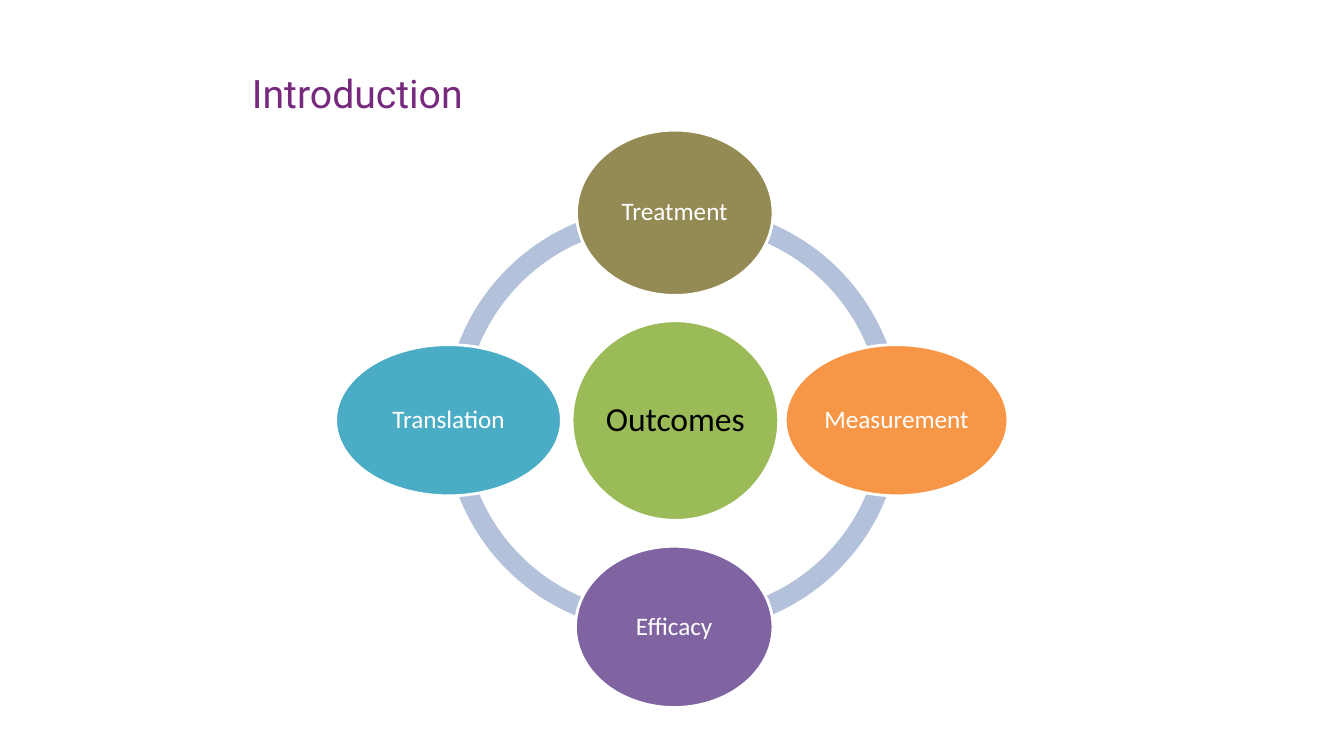
"""Build the Introduction slide: a ring of four topics around Outcomes."""
from pptx import Presentation
from pptx.dml.color import RGBColor
from pptx.enum.shapes import MSO_SHAPE
from pptx.enum.text import MSO_ANCHOR, PP_ALIGN
from pptx.util import Pt

TITLE = "Introduction"
HUB = (482, 300.2)
# label, offset from hub, size, fill, kind of text
NODES = [
    ("Outcomes", (0.4, 0.2), (147.6, 142.6), "9BBB59", "hub"),
    ("Treatment", (0, -148.2), (140.4, 118.1), "948A54", "node"),
    ("Measurement", (158.4, 0), (159.1, 108), "F79646", "node"),
    ("Efficacy", (-0.4, 147.6), (141.1, 115.2), "8064A2", "node"),
    ("Translation", (-161.6, 0), (161.3, 108), "4BACC6", "node"),
]
# offset from hub, start and end in degrees
ARCS = [
    ((-12.2, -0.3), 180.02, 274.73),
    ((-12.2, -1), 85.4, 179.75),
    ((9.4, -1), 0.3, 93.91),
    ((9.4, -0.3), 266.23, 359.91),
]
RING = (304.6, 304.6)
BAND = 0.046
THEME = {
    "arc": "B3C1DB",
    "edge": "FFFFFF",
    "title": {"name": "Roboto", "size": Pt(28), "color": "77297D"},
    "hub": {"name": "Calibri", "size": Pt(24), "color": "000000"},
    "node": {"name": "Calibri", "size": Pt(18), "color": "FFFFFF"},
}
PAD = {"margin_left": Pt(2), "margin_right": Pt(2),
       "margin_top": Pt(2), "margin_bottom": Pt(2)}
MID = {"word_wrap": True, "vertical_anchor": MSO_ANCHOR.MIDDLE}


def apply(item, props):
    """Set each named value on an item."""
    for key, val in props.items():
        setattr(item, key, val)


def write(shape, text, kind, frame, para):
    """Put styled text into a shape."""
    apply(shape.text_frame, {**MID, **frame})
    line = shape.text_frame.paragraphs[0]
    apply(line, para)
    run = line.add_run()
    run.text = text
    font = dict(THEME[kind])
    run.font.color.rgb = RGBColor.from_string(font.pop("color"))
    apply(run.font, font)


def draw(slide, form, shift, size, fill):
    """Add a filled shape centred at a shift from the hub."""
    spot = [h + s - d / 2 for h, s, d in zip(HUB, shift, size)]
    shape = slide.shapes.add_shape(form, *[Pt(v) for v in (*spot, *size)])
    shape.shadow.inherit = False
    shape.fill.solid()
    shape.fill.fore_color.rgb = RGBColor.from_string(fill)
    return shape


def main():
    """Compose and save the slide."""
    deck = Presentation()
    apply(deck, {"slide_width": Pt(960), "slide_height": Pt(540)})
    slide = deck.slides.add_slide(deck.slide_layouts[5])
    head = slide.shapes.title
    apply(head, {"left": Pt(159), "top": Pt(21.6),
                 "width": Pt(648), "height": Pt(90)})
    write(head, TITLE, "title", {"margin_left": Pt(21)},
          {"alignment": PP_ALIGN.LEFT})

    for shift, start, end in ARCS:
        arc = draw(slide, MSO_SHAPE.BLOCK_ARC, shift, RING, THEME["arc"])
        arc.line.fill.background()
        for i, val in enumerate((start * 0.6, end * 0.6, BAND)):
            arc.adjustments[i] = val

    for label, shift, size, fill, kind in NODES:
        node = draw(slide, MSO_SHAPE.OVAL, shift, size, fill)
        node.line.color.rgb = RGBColor.from_string(THEME["edge"])
        node.line.width = Pt(2)
        write(node, label, kind, PAD,
              {"alignment": PP_ALIGN.CENTER, "line_spacing": 0.9})

    deck.save("out.pptx")


if __name__ == "__main__":
    main()
